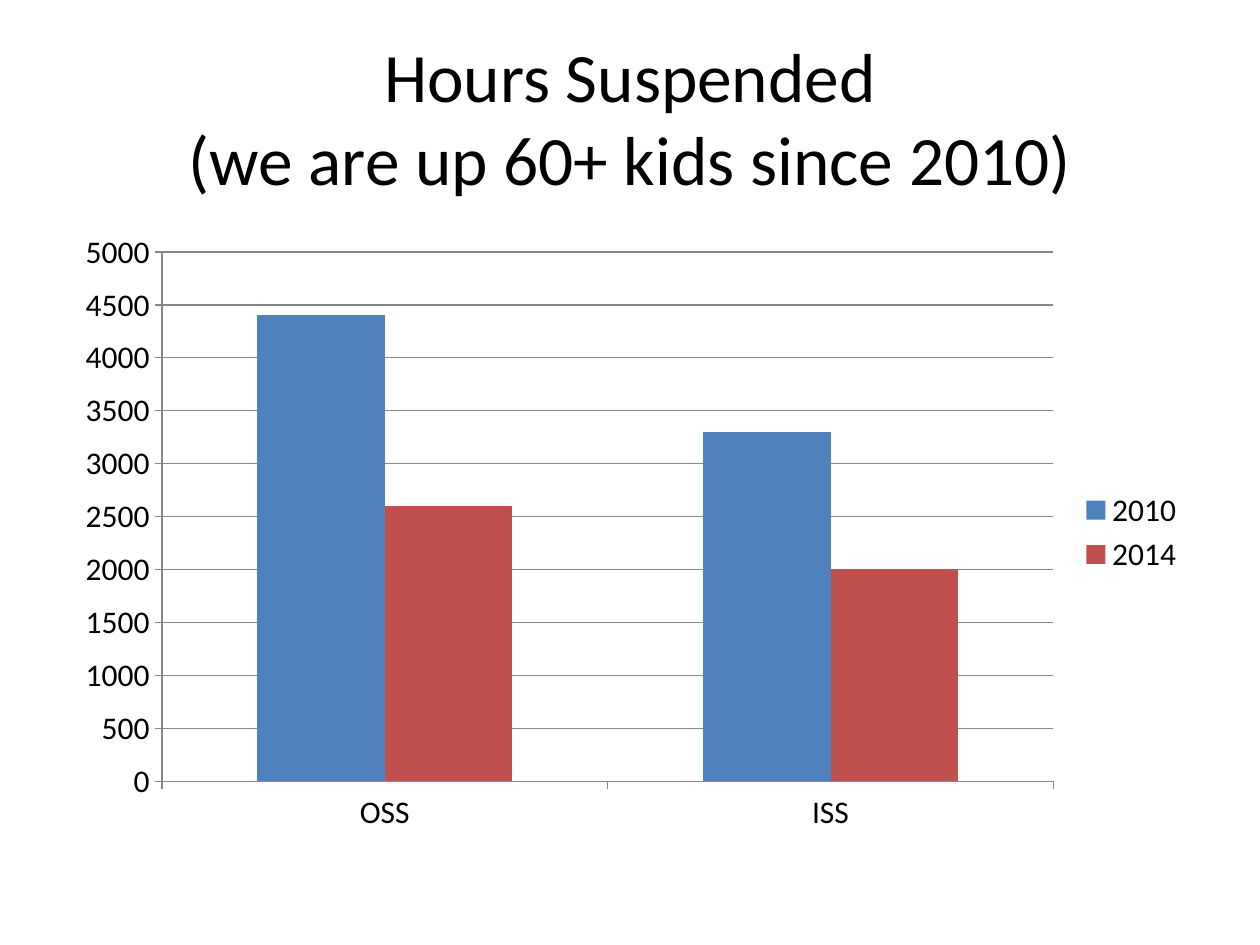
from dataclasses import dataclass

from pptx import Presentation
from pptx import util as u
from pptx.chart.data import CategoryChartData
from pptx.dml.color import RGBColor
from pptx.enum import chart as charts, text

FONT = "Calibri"
COLORS = {"text": "000000", "line": "878787", "blue": "4F81BD", "red": "C0504D"}


@dataclass
class YearHours:
    year: str
    hours: tuple[int, ...]
    color: str


CATEGORIES = ("OSS", "ISS")
YEARS = (
    YearHours("2010", (4400, 3300), "blue"),
    YearHours("2014", (2600, 2000), "red"),
)


def rgb(name: str) -> RGBColor:
    return RGBColor.from_string(COLORS[name])


def format_font(font, *, size: float, color: str = "text") -> None:
    font.name = FONT
    font.size = u.Pt(size)
    font.bold = False
    font.color.rgb = rgb(color)


def write_text(box, lines: tuple[str, ...], *, size: float, color: str = "text",
               align=text.PP_ALIGN.CENTER, anchor=text.MSO_ANCHOR.MIDDLE) -> None:
    frame = box.text_frame
    frame.word_wrap = True
    frame.auto_size = text.MSO_AUTO_SIZE.NONE
    frame.vertical_anchor = anchor
    para = frame.paragraphs[0]
    para.alignment = align
    for index, line in enumerate(lines):
        if index:
            para.add_line_break()
        span = para.add_run()
        span.text = line
        format_font(span.font, size=size, color=color)


def format_line(line) -> None:
    line.color.rgb = rgb("line")
    line.width = u.Pt(0.75)


def add_hours_chart(page, years: tuple[YearHours, ...]) -> None:
    data = CategoryChartData()
    data.categories = CATEGORIES
    for entry in years:
        data.add_series(entry.year, entry.hours)
    chart = page.shapes.add_chart(
        charts.XL_CHART_TYPE.COLUMN_CLUSTERED,
        u.Inches(0.5), u.Inches(1.75), u.Inches(9), u.Inches(4.95), data,
    ).chart
    chart.has_title = False
    format_font(chart.font, size=18)

    plot = chart.plots[0]
    plot.gap_width = 150
    plot.overlap = 0
    plot.vary_by_categories = False
    for series, entry in zip(plot.series, years):
        series.invert_if_negative = False
        series.format.fill.solid()
        series.format.fill.fore_color.rgb = rgb(entry.color)

    for axis in (chart.category_axis, chart.value_axis):
        axis.major_tick_mark = charts.XL_TICK_MARK.OUTSIDE
        axis.minor_tick_mark = charts.XL_TICK_MARK.NONE
        format_line(axis.format.line)
    scale = chart.value_axis
    scale.minimum_scale, scale.maximum_scale, scale.major_unit = 0, 5000, 500
    scale.has_major_gridlines = True
    format_line(scale.major_gridlines.format.line)

    chart.has_legend = True
    chart.legend.position = charts.XL_LEGEND_POSITION.RIGHT
    chart.legend.include_in_layout = False


def main() -> None:
    deck = Presentation()
    deck.slide_width, deck.slide_height = u.Inches(10), u.Inches(7.5)
    page = deck.slides.add_slide(deck.slide_layouts[5])
    title = page.shapes.title
    title.left, title.top = u.Inches(0.5), u.Inches(0.3)
    title.width, title.height = u.Inches(9), u.Inches(1.25)
    write_text(title, ("Hours Suspended", "(we are up 60+ kids since 2010)"), size=39.6)
    add_hours_chart(page, YEARS)
    deck.save("out.pptx")


if __name__ == "__main__":
    main()
